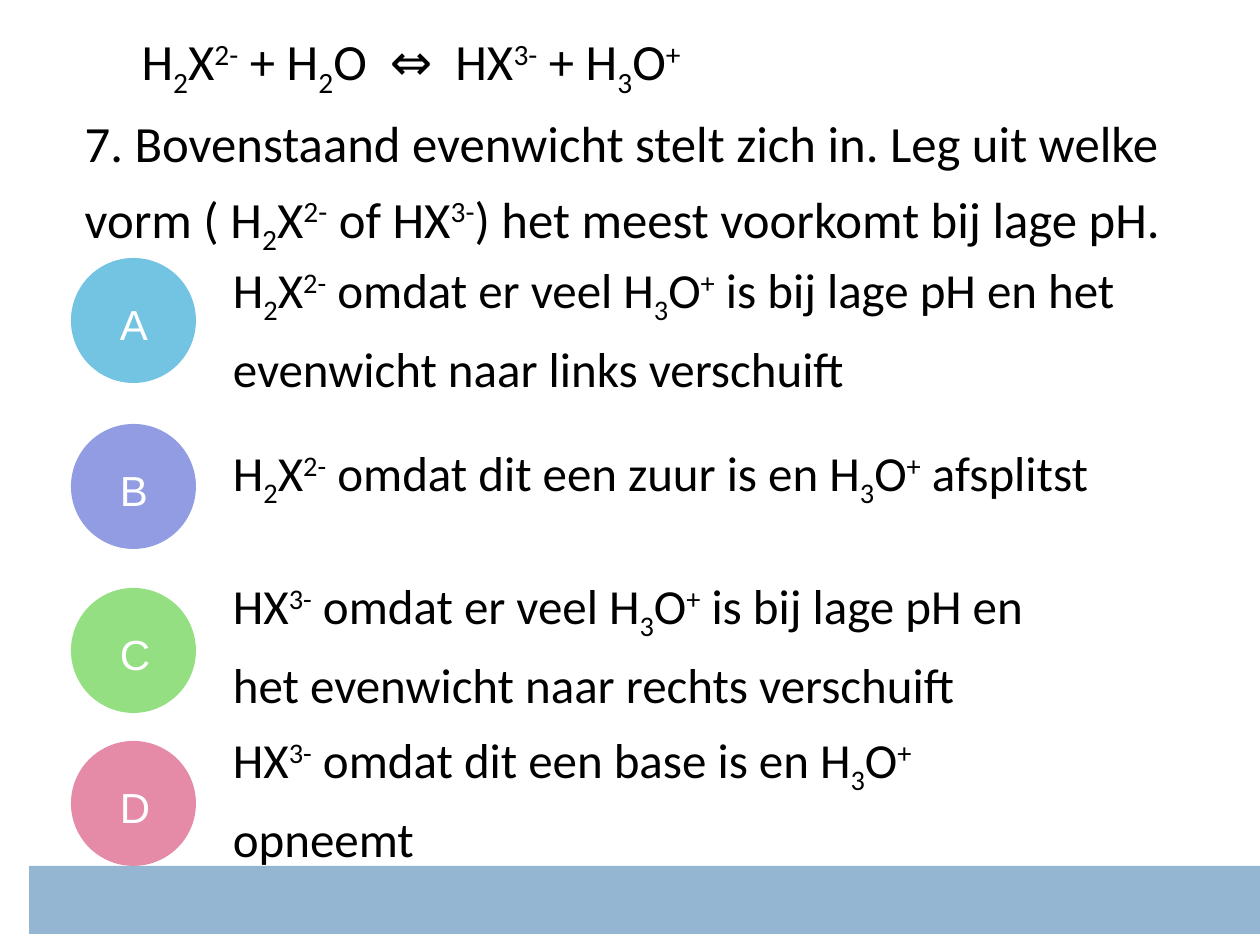
from pptx import Presentation, util as u
from pptx.dml.color import RGBColor
from pptx.enum import shapes, text

PX = 914400 // 126
BASE = {"_": "-25000", "^": "30000"}
ASK = (
    "H|_2|X|^2-| + H|_2|O  ⇔  HX|^3-| + H|_3|O|^+",
    "7. Bovenstaand evenwicht stelt zich in. Leg uit welke vorm "
    "( H|_2|X|^2-| of HX|^3-|) het meest voorkomt bij lage pH.",
)
ROWS = (
    ("A", "73C3E3", 258, 281, 995,
     "H|_2|X|^2-| omdat er veel H|_3|O|^+| is bij lage pH en het evenwicht naar links verschuift"),
    ("B", "919CE3", 424, 428, 873,
     "H|_2|X|^2-| omdat dit een zuur is en H|_3|O|^+| afsplitst"),
    ("C", "95DF83", 588, 597, 848,
     "HX|^3-| omdat er veel H|_3|O|^+| is bij lage pH en het evenwicht naar rechts verschuift"),
    ("D", "E58BA8", 741, 751, 848,
     "HX|^3-| omdat dit een base is en H|_3|O|^+ |opneemt"),
)


def px(*nums):
    """Turn pixels into EMU."""
    return [n * PX for n in nums]


def tint(color, code):
    """Set a colour format from a hex string."""
    color.rgb = RGBColor.from_string(code)


def write(par, marked, size, face="Calibri", code="000000"):
    """Write pieces split by bars, with _ for subscript and ^ for superscript."""
    par.alignment = text.PP_ALIGN.LEFT
    par.line_spacing = 1.21
    par.font.size, par.font.name = u.Pt(size), face
    tint(par.font.color, code)
    for part in marked.split("|"):
        run = par.add_run()
        run.text = part.lstrip("_^")
        if part[0] in BASE:
            run.font._element.set("baseline", BASE[part[0]])


def shape(home, kind, box, code):
    """Add a plain filled shape."""
    item = home.add_shape(kind, *px(*box))
    item.shadow.inherit = False
    item.fill.solid()
    tint(item.fill.fore_color, code)
    item.line.fill.background()


def label(home, box, marked, size, **look):
    """Add a wrapped text box centred on its height."""
    frame = home.add_textbox(*px(*box)).text_frame
    frame.word_wrap = True
    frame.vertical_anchor = text.MSO_ANCHOR.MIDDLE
    frame.margin_left = frame.margin_right = 5 * PX
    frame.margin_top = frame.margin_bottom = 5 * PX
    write(frame.paragraphs[0], marked, size, **look)


def title(item, lines):
    """Place the question in the title, with its first line indented."""
    item.left, item.top, item.width, item.height = px(72, 9, 1118, 248)
    frame = item.text_frame
    frame.word_wrap = True
    frame.auto_size = text.MSO_AUTO_SIZE.NONE
    frame.vertical_anchor = text.MSO_ANCHOR.TOP
    first = frame.paragraphs[0]
    write(first, lines[0], 29)
    first._p.get_or_add_pPr().set("indent", str(57 * PX))
    write(frame.add_paragraph(), lines[1], 29)


def badge(home, letter, code, top):
    """Add a grouped circle with its letter."""
    group = home.add_group_shape().shapes
    shape(group, shapes.MSO_SHAPE.OVAL, (71, top, 125, 125), code)
    label(group, (115, top + 31, 49, 59), letter, 24, face="Arial", code="FFFFFF")


def main():
    """Build the quiz slide."""
    deck = Presentation()
    deck.slide_width, deck.slide_height = u.Inches(10), u.Inches(7.5)
    slide = deck.slides.add_slide(deck.slide_layouts[5])
    title(slide.shapes.title, ASK)
    for letter, code, top, line, width, answer in ROWS:
        badge(slide.shapes, letter, code, top)
        label(slide.shapes, (228, line, width, 81), answer, 28)
    shape(slide.shapes, shapes.MSO_SHAPE.RECTANGLE, (29, 866, 1231, 68), "94B6D2")
    deck.save("out.pptx")


if __name__ == "__main__":
    main()
